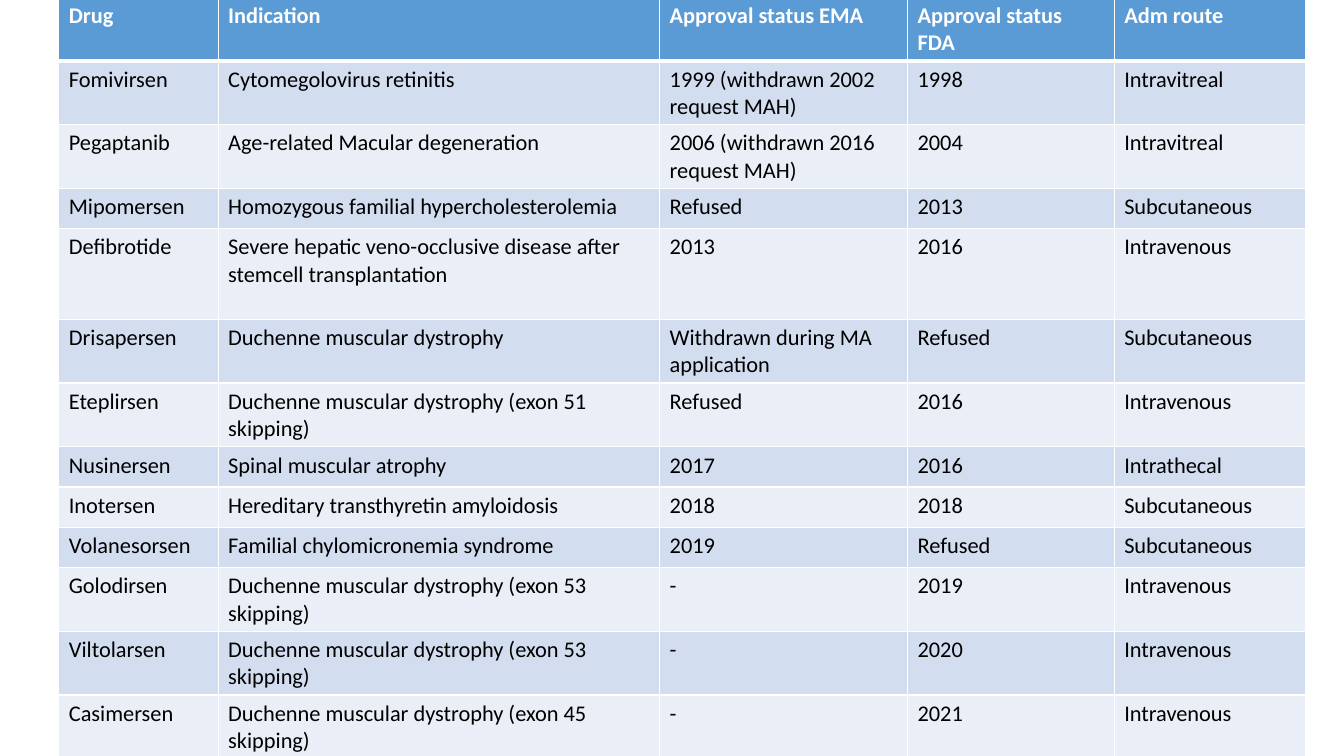
import pptx
import pptx.util
import pptx.dml.color
import pptx.oxml.ns
import lxml.etree

HEADER_BLUE, BAND_DARK, BAND_LIGHT = "5B9BD5", "D2DEEF", "EAEFF7"
WHITE, BLACK = "FFFFFF", "000000"
TWO_LINES, ONE_LINE, TALL = 45.6, 28.7, 64.8
COLUMN_WIDTHS = [113.8, 315.4, 177.1, 147.6, 136.6]
HEADINGS = ("Drug", "Indication", "Approval status EMA", "Approval status FDA", "Adm route")
DRUGS = [
    (TWO_LINES, "Fomivirsen", "Cytomegolovirus retinitis",
     "1999 (withdrawn 2002 request MAH)", "1998", "Intravitreal"),
    (TWO_LINES, "Pegaptanib", "Age-related Macular degeneration",
     "2006 (withdrawn 2016 request MAH)", "2004", "Intravitreal"),
    (ONE_LINE, "Mipomersen", "Homozygous familial hypercholesterolemia",
     "Refused", "2013", "Subcutaneous"),
    (TALL, "Defibrotide", "Severe hepatic veno-occlusive disease after stemcell transplantation",
     "2013", "2016", "Intravenous"),
    (TWO_LINES, "Drisapersen", "Duchenne muscular dystrophy",
     "Withdrawn during MA application", "Refused", "Subcutaneous"),
    (TWO_LINES, "Eteplirsen", "Duchenne muscular dystrophy (exon 51 skipping)",
     "Refused", "2016", "Intravenous"),
    (ONE_LINE, "Nusinersen", "Spinal muscular atrophy", "2017", "2016", "Intrathecal"),
    (ONE_LINE, "Inotersen", "Hereditary transthyretin amyloidosis",
     "2018", "2018", "Subcutaneous"),
    (ONE_LINE, "Volanesorsen", "Familial chylomicronemia syndrome",
     "2019", "Refused", "Subcutaneous"),
    (TWO_LINES, "Golodirsen", "Duchenne muscular dystrophy (exon 53 skipping)",
     "-", "2019", "Intravenous"),
    (TWO_LINES, "Viltolarsen", "Duchenne muscular dystrophy (exon 53 skipping)",
     "-", "2020", "Intravenous"),
    (TWO_LINES, "Casimersen", "Duchenne muscular dystrophy (exon 45 skipping)",
     "-", "2021", "Intravenous"),
]


def rgb(hex_colour):
    """Turn a hex string into a colour."""
    return pptx.dml.color.RGBColor.from_string(hex_colour)


def add_border(cell, side, width):
    """Draw one white border of a cell."""
    qn = pptx.oxml.ns.qn
    border = lxml.etree.SubElement(cell._tc.get_or_add_tcPr(), qn(f"a:ln{side}"),
                                   w=str(pptx.util.Pt(width)))
    fill = lxml.etree.SubElement(border, qn("a:solidFill"))
    lxml.etree.SubElement(fill, qn("a:srgbClr"), val=WHITE)


def fill_cell(cell, wording, background, ink, bold, bottom):
    """Write, fill and border one cell."""
    for side, width in (("L", 1), ("R", 1), ("T", 1), ("B", bottom)):
        add_border(cell, side, width)
    cell.margin_bottom = pptx.util.Pt(2)
    cell.fill.solid()
    cell.fill.fore_color.rgb = rgb(background)
    run = cell.text_frame.paragraphs[0].add_run()
    run.text = wording
    run.font.name = "Calibri"
    run.font.size = pptx.util.Pt(16)
    run.font.bold = bold
    run.font.color.rgb = rgb(ink)


def add_approvals_table(slide, left, top):
    """Place the drug approvals table with its corner at the given point."""
    rows = [(TWO_LINES, *HEADINGS)] + DRUGS
    width, height = sum(COLUMN_WIDTHS), sum(row[0] for row in rows)
    approvals = slide.shapes.add_table(
        len(rows), len(HEADINGS), *map(pptx.util.Pt, (left, top, width, height))).table
    for column, column_width in zip(approvals.columns, COLUMN_WIDTHS):
        column.width = pptx.util.Pt(column_width)
    for index, (row_height, *entries) in enumerate(rows):
        approvals.rows[index].height = pptx.util.Pt(row_height)
        header = index == 0
        band = BAND_DARK if index % 2 else BAND_LIGHT
        for column_index, wording in enumerate(entries):
            fill_cell(approvals.cell(index, column_index), wording,
                      HEADER_BLUE if header else band, WHITE if header else BLACK,
                      header, 3 if header else 1)


def main():
    """Build the slide and save it."""
    presentation = pptx.Presentation()
    presentation.slide_width = pptx.util.Pt(960)
    presentation.slide_height = pptx.util.Pt(540)
    slide = presentation.slides.add_slide(presentation.slide_layouts[6])
    add_approvals_table(slide, 42, -2.2)
    presentation.save("out.pptx")


if __name__ == "__main__":
    main()
